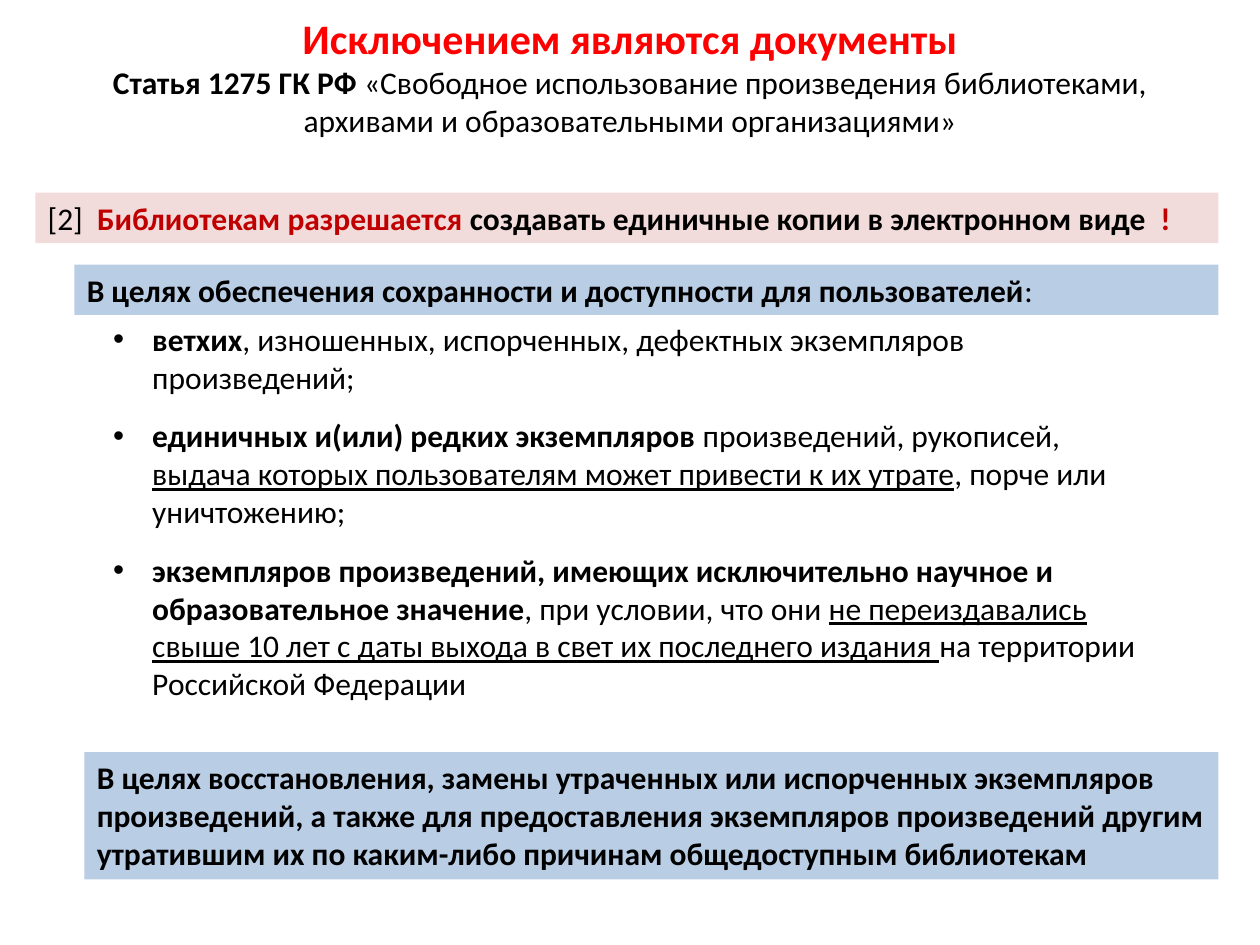
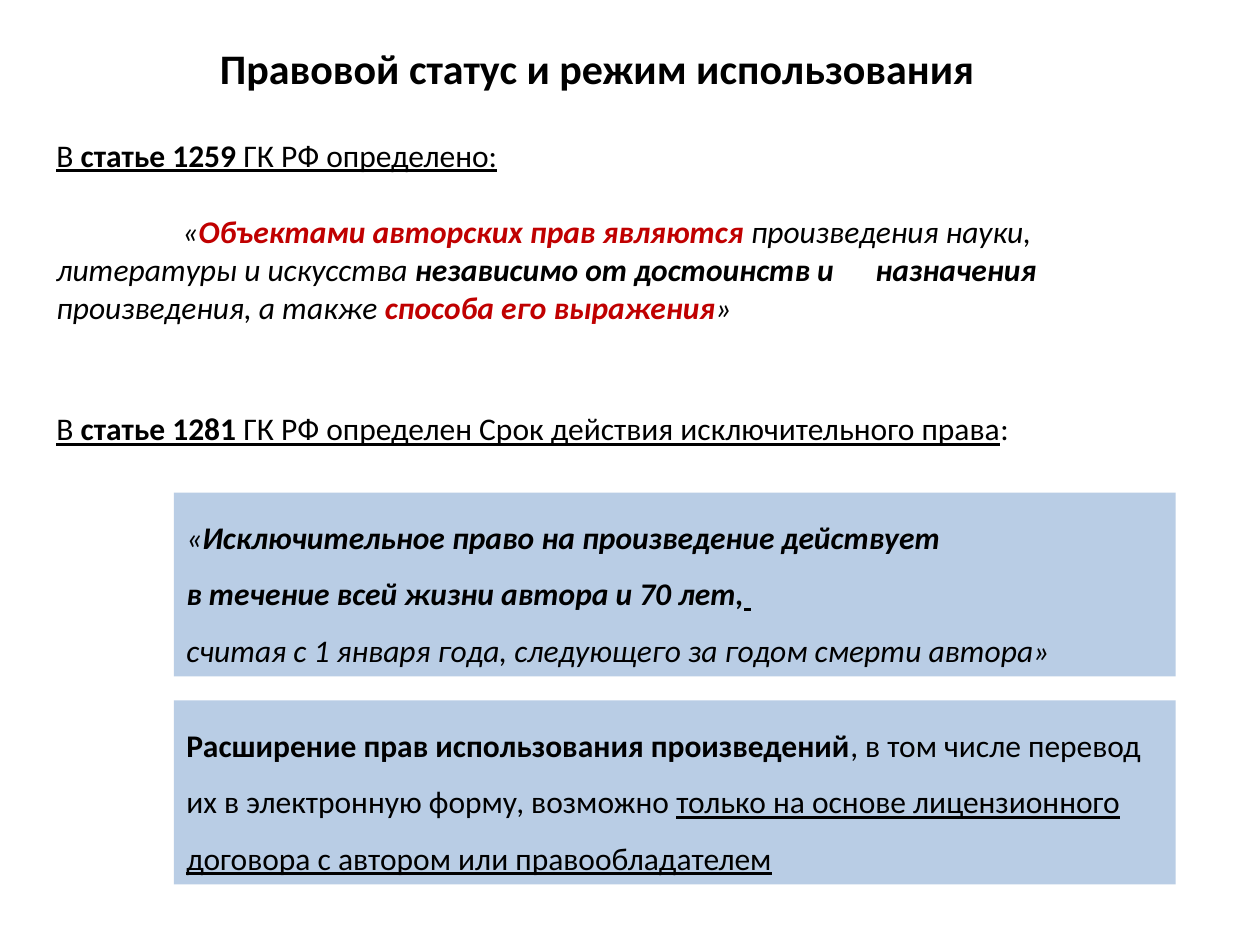
from lxml import etree
from pptx import Presentation
from pptx.enum import shapes, text
from pptx.dml.color import RGBColor
from pptx.oxml.ns import qn
from pptx.util import Inches, Pt

FONT = "Calibri"
SIZE = 18
HEAD = 24
COLORS = {
    "text": "000000",
    "alert": "FF0000",
    "accent": "C00000",
    "rose": "F2DCDB",
    "blue": "B9CDE5",
}


def tint(name):
    return RGBColor.from_string(COLORS[name])


# Text: each paragraph is a list of (words, marks) pairs;
# marks are b bold, i italic, u underline, c accent colour
def add_runs(para, runs, size=SIZE, color="text"):
    for words, marks in runs:
        run = para.add_run()
        run.text = words
        font = run.font
        font.name, font.size = FONT, Pt(size)
        font.bold = "b" in marks
        font.italic = "i" in marks
        font.underline = "u" in marks
        font.color.rgb = tint("accent" if "c" in marks else color)


def fill_frame(frame, paras, line=None):
    frame.word_wrap = True
    frame.vertical_anchor = text.MSO_ANCHOR.TOP
    for num, runs in enumerate(paras):
        para = frame.add_paragraph() if num else frame.paragraphs[0]
        para.alignment = text.PP_ALIGN.LEFT
        para.line_spacing = line
        add_runs(para, runs)
    return frame.paragraphs


def set_indent(para, left, first):
    props = para._p.get_or_add_pPr()
    props.set("marL", str(Inches(left)))
    props.set("indent", str(Inches(first)))
    return props


# Kinds of element
def add_title(slide, box, words, color="text", sub=()):
    title = slide.shapes.title
    title.left, title.top, title.width, title.height = map(Inches, box)
    frame = title.text_frame
    frame.word_wrap = True
    frame.auto_size = text.MSO_AUTO_SIZE.NONE
    frame.vertical_anchor = text.MSO_ANCHOR.TOP
    add_runs(frame.paragraphs[0], [(words, "b")], HEAD, color)
    if sub:
        add_runs(frame.add_paragraph(), sub)
    for para in frame.paragraphs:
        para.alignment = text.PP_ALIGN.CENTER


def add_text(slide, box, paras):
    area = slide.shapes.add_textbox(*map(Inches, box))
    return fill_frame(area.text_frame, paras)


def add_list(slide, box, items):
    for para in add_text(slide, box, items):
        para.space_after = Pt(12)
        props = set_indent(para, 0.31, -0.31)
        etree.SubElement(props, qn("a:buFont")).set("typeface", "Arial")
        etree.SubElement(props, qn("a:buChar")).set("char", "•")


def add_band(slide, box, color, paras, line=None):
    band = slide.shapes.add_shape(
        shapes.MSO_SHAPE.RECTANGLE, *map(Inches, box))
    band.shadow.inherit = False
    band.fill.solid()
    band.fill.fore_color.rgb = tint(color)
    band.line.fill.background()
    fill_frame(band.text_frame, paras, line)
    band.text_frame.auto_size = text.MSO_AUTO_SIZE.SHAPE_TO_FIT_TEXT


# Slides
def copies_slide(slide):
    add_title(
        slide, (0.51, 0.05, 8.98, 1.1), "Исключением являются документы",
        "alert",
        [("Статья 1275 ГК РФ ", "b"),
         ("«Свободное использование произведения библиотеками, "
          "архивами и образовательными организациями»", "")])
    add_list(slide, (0.8, 2.49, 8.35, 3.23), [
        [("ветхих", "b"),
         (", изношенных, испорченных, дефектных экземпляров "
          "произведений;", "")],
        [("единичных и(или) редких экземпляров ", "b"),
         ("произведений, рукописей, ", ""),
         ("выдача которых пользователям может привести к их утрате", "u"),
         (", порче или уничтожению;", "")],
        [("экземпляров произведений, имеющих исключительно научное и "
          "образовательное значение", "b"),
         (", при условии, что они ", ""),
         ("не переиздавались свыше 10 лет с даты выхода в свет "
          "их последнего издания ", "u"),
         ("на территории Российской Федерации", "")],
    ])

    # Bands share their right edge
    right = 9.67
    bands = [
        (0.28, 1.53, 0.4, "rose",
         [("[2]  ", ""), ("Библиотекам разрешается ", "bc"),
          ("создавать единичные копии в электронном виде  ", "b"),
          ("!", "bc")]),
        (0.59, 2.1, 0.4, "blue",
         [("В целях обеспечения сохранности и доступности "
           "для пользователей", "b"), (":", "")]),
        (0.67, 5.97, 1.01, "blue",
         [("В целях восстановления, замены утраченных или испорченных "
           "экземпляров произведений, а также для предоставления "
           "экземпляров произведений другим утратившим их по каким-либо "
           "причинам общедоступным библиотекам", "b")]),
    ]
    for left, top, high, color, runs in bands:
        add_band(slide, (left, top, right - left, high), color, [runs])


def status_slide(slide):
    add_title(slide, (0.37, 0.29, 8.74, 0.42),
              "Правовой статус и режим использования")

    # Articles of the code
    quote = add_text(slide, (0.35, 1.03, 9.13, 1.62), [
        [("В ", "u"), ("статье 1259 ", "bu"), ("ГК РФ определено:", "u")],
        [("«", "i"), ("Объектами авторских прав являются ", "bic"),
         ("произведения науки, литературы и искусства ", "i"),
         ("независимо от достоинств и \tназначения ", "bi"),
         ("произведения, а также ", "i"),
         ("способа его выражения", "bic"), ("»", "i")],
    ])[1]
    quote.space_before = Pt(22)
    set_indent(quote, 0, 1)
    add_text(slide, (0.35, 3.2, 9.24, 0.55), [
        [("В ", "u"), ("статье 1281", "bu"),
         (" ГК РФ определен Срок действия исключительного права", "u"),
         (":", "")],
    ])

    # Terms of use
    terms = [
        [[("«", "i"),
          ("Исключительное право на произведение действует", "bi")],
         [("в течение всей жизни автора и 70 лет,", "bi"), (" ", "iu")],
         [("считая с 1 января года, следующего за годом смерти автора»",
           "i")]],
        [[("Расширение прав использования произведений", "b"),
          (", в том числе перевод их в электронную форму, возможно ", ""),
          ("только на основе лицензионного договора с автором или "
           "правообладателем", "u")]],
    ]
    for row, paras in enumerate(terms):
        add_band(slide, (1.38, 3.91 + row * 1.65, 7.95, 1.46), "blue",
                 paras, 1.5)


def main():
    deck = Presentation()
    deck.slide_width, deck.slide_height = Inches(10), Inches(7.5)
    for build in (copies_slide, status_slide):
        build(deck.slides.add_slide(deck.slide_layouts[5]))
    deck.save("out.pptx")


if __name__ == "__main__":
    main()
